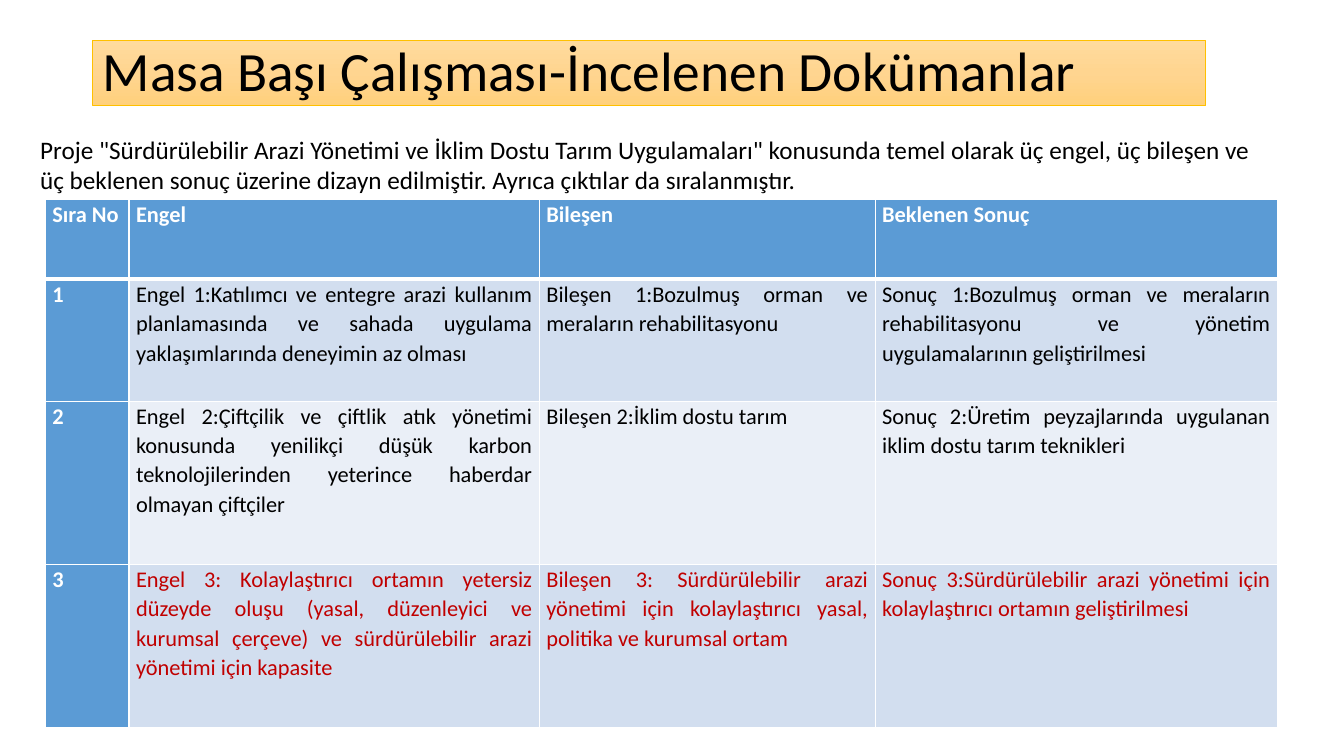
from copy import deepcopy
from dataclasses import dataclass

from lxml.etree import SubElement
from pptx import Presentation
from pptx.dml.color import RGBColor
from pptx.enum.shapes import MSO_SHAPE
from pptx.enum.text import MSO_ANCHOR, PP_ALIGN
from pptx.oxml.ns import qn
from pptx.util import Inches, Pt


@dataclass(frozen=True)
class Theme:
    font: str = "Calibri"
    title_size: float = 39.6
    intro_size: float = 18
    table_size: float = 16
    black: str = "000000"
    white: str = "FFFFFF"
    red: str = "C00000"
    blue: str = "5B9BD5"
    bands: tuple = ("D2DEEF", "EAEFF7")
    title_line: str = "FFC000"
    title_stops: tuple = ((0, "FFDB9E"), (0.5, "FFD590"), (1, "FFD07C"))


THEME = Theme()

TITLE = "Masa Başı Çalışması-İncelenen Dokümanlar"
INTRO = (
    'Proje "Sürdürülebilir Arazi Yönetimi ve İklim Dostu Tarım Uygulamaları" '
    "konusunda temel olarak üç engel, üç bileşen ve üç beklenen sonuç üzerine "
    "dizayn edilmiştir. Ayrıca çıktılar da sıralanmıştır."
)
COL_WIDTHS = (0.83, 4.07, 3.33, 3.99)
ROW_HEIGHTS = (0.79, 1.21, 1.62, 1.62)
ROWS = (
    ("Sıra No", "Engel", "Bileşen ", "Beklenen Sonuç"),
    (
        "1",
        "Engel 1:Katılımcı ve entegre arazi kullanım planlamasında ve sahada "
        "uygulama yaklaşımlarında deneyimin az olması",
        "Bileşen 1:Bozulmuş orman ve meraların rehabilitasyonu",
        "Sonuç 1:Bozulmuş orman ve meraların rehabilitasyonu ve yönetim "
        "uygulamalarının geliştirilmesi",
    ),
    (
        "2",
        "Engel 2:Çiftçilik ve çiftlik atık yönetimi konusunda yenilikçi düşük "
        "karbon teknolojilerinden yeterince haberdar olmayan çiftçiler",
        "Bileşen 2:İklim dostu tarım",
        "Sonuç 2:Üretim peyzajlarında uygulanan iklim dostu tarım teknikleri",
    ),
    (
        "3",
        "Engel 3: Kolaylaştırıcı ortamın yetersiz düzeyde oluşu (yasal, "
        "düzenleyici ve kurumsal çerçeve) ve sürdürülebilir arazi yönetimi "
        "için kapasite",
        "Bileşen 3: Sürdürülebilir arazi yönetimi için kolaylaştırıcı yasal, "
        "politika ve kurumsal ortam",
        "Sonuç 3:Sürdürülebilir arazi yönetimi için kolaylaştırıcı ortamın "
        "geliştirilmesi",
    ),
)


def add_run(p, text, size, color, bold=False):
    r = p.add_run()
    r.text = text
    r.font.name = THEME.font
    r.font.size = Pt(size)
    r.font.bold = bold
    r.font.color.rgb = RGBColor.from_string(color)


def fill_gradient(sp, stops):
    sp.fill.gradient()
    sp.fill.gradient_angle = 270
    first = next(sp._element.spPr.iter(qn("a:gs")))
    first.addnext(deepcopy(first))  # a new gradient has only two stops
    for stop, (position, color) in zip(sp.fill.gradient_stops, stops):
        stop.position = position
        stop.color.rgb = RGBColor.from_string(color)


def add_title(s):
    sp = s.shapes.add_shape(MSO_SHAPE.RECTANGLE, Inches(0.92), Inches(0.4),
                            Inches(11.04), Inches(0.65))
    sp.shadow.inherit = False
    fill_gradient(sp, THEME.title_stops)
    sp.line.color.rgb = RGBColor.from_string(THEME.title_line)
    sp.line.width = Pt(0.5)
    tf = sp.text_frame
    tf.word_wrap = True
    tf.vertical_anchor = MSO_ANCHOR.MIDDLE
    p = tf.paragraphs[0]
    p.alignment = PP_ALIGN.LEFT
    p.line_spacing = 0.9
    add_run(p, TITLE, THEME.title_size, THEME.black)


def add_intro(s):
    sp = s.shapes.add_textbox(Inches(0.3), Inches(1.28), Inches(12.37), Inches(0.71))
    tf = sp.text_frame
    tf.word_wrap = True
    add_run(tf.paragraphs[0], INTRO, THEME.intro_size, THEME.black)


def set_borders(cell, top, bottom):
    tcPr = cell._tc.get_or_add_tcPr()
    for side, width in (("L", 1), ("R", 1), ("T", top), ("B", bottom)):
        ln = SubElement(tcPr, qn(f"a:ln{side}"), w=str(Pt(width)))
        SubElement(SubElement(ln, qn("a:solidFill")), qn("a:srgbClr"), val=THEME.white)


def style_cell(cell, text, row, col):
    is_header = row == 0 or col == 0
    # Borders precede the fill in the cell properties; the header rule is thicker
    set_borders(cell, top=3 if row == 1 else 1, bottom=3 if row == 0 else 1)
    cell.fill.solid()
    cell.fill.fore_color.rgb = RGBColor.from_string(
        THEME.blue if is_header else THEME.bands[(row - 1) % 2])
    cell.margin_left = cell.margin_right = Inches(0.07)
    cell.margin_top = cell.margin_bottom = 0
    p = cell.text_frame.paragraphs[0]
    p.alignment = PP_ALIGN.JUSTIFY
    p.line_spacing = 1.07
    p.space_after = Pt(6)
    body_color = THEME.red if row == len(ROWS) - 1 else THEME.black
    add_run(p, text, THEME.table_size,
            THEME.white if is_header else body_color, bold=is_header)


def add_barrier_table(s):
    table = s.shapes.add_table(
        len(ROWS), len(COL_WIDTHS), Inches(0.45), Inches(1.98),
        Inches(sum(COL_WIDTHS)), Inches(sum(ROW_HEIGHTS))).table
    table.first_col = True
    for column, width in zip(table.columns, COL_WIDTHS):
        column.width = Inches(width)
    for table_row, height in zip(table.rows, ROW_HEIGHTS):
        table_row.height = Inches(height)
    for row, texts in enumerate(ROWS):
        for col, text in enumerate(texts):
            style_cell(table.cell(row, col), text, row, col)


def main():
    prs = Presentation()
    prs.slide_width, prs.slide_height = Inches(13.33), Inches(7.5)
    s = prs.slides.add_slide(prs.slide_layouts[6])
    add_title(s)
    add_barrier_table(s)
    add_intro(s)
    prs.save("out.pptx")


if __name__ == "__main__":
    main()
